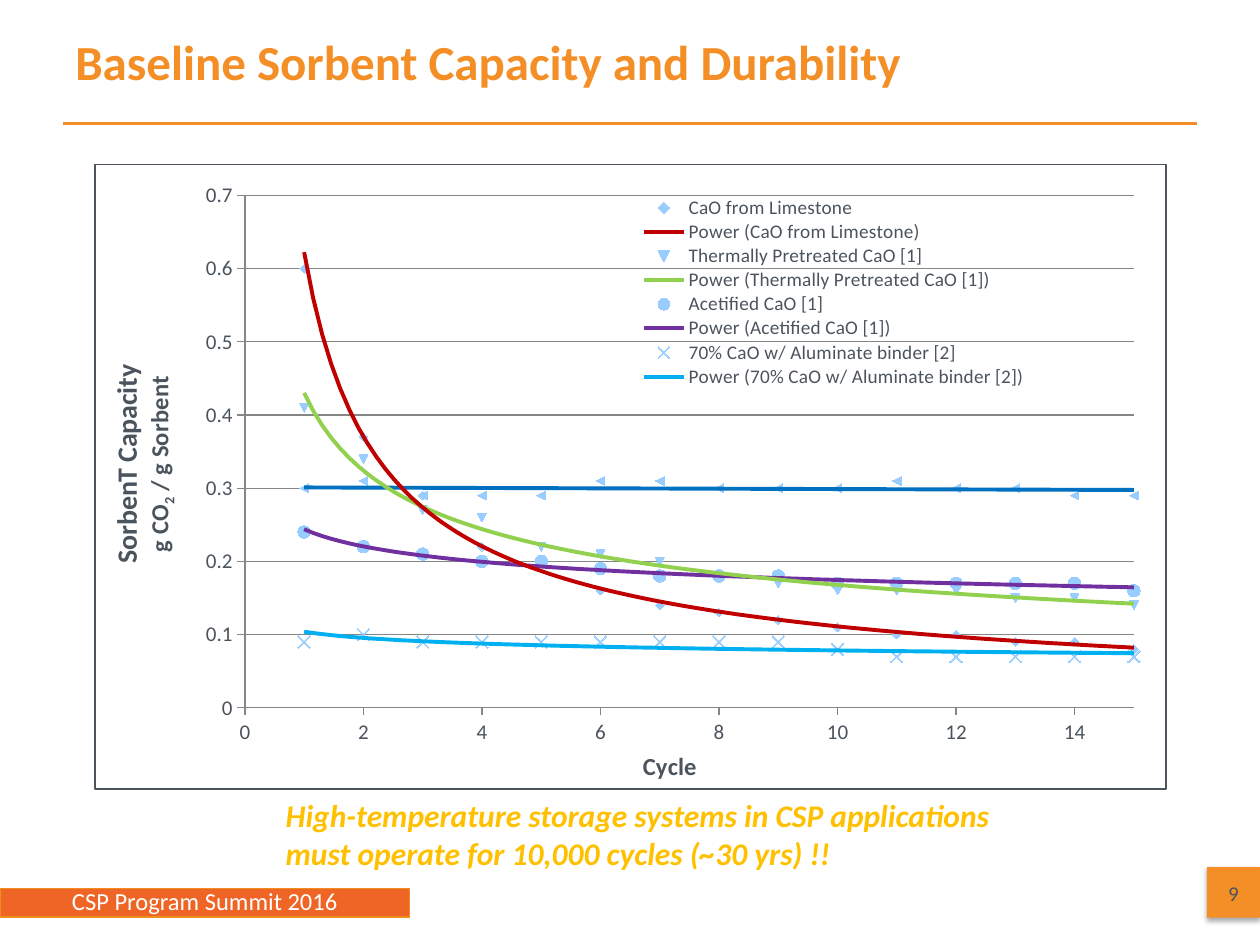
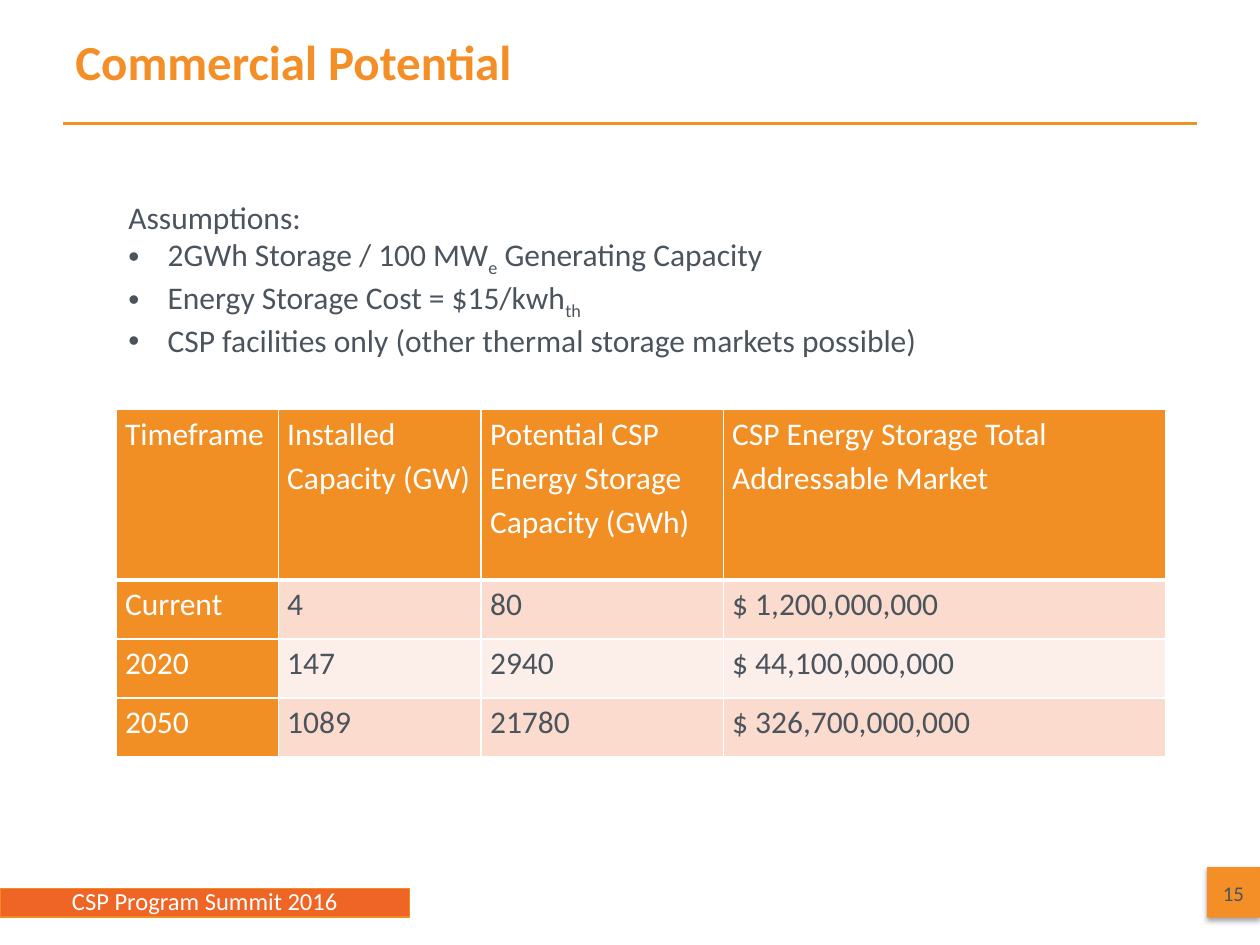
from lxml import etree
from pptx import Presentation
from pptx.chart.data import XyChartData
from pptx.dml.color import RGBColor
from pptx.enum.chart import XL_CHART_TYPE, XL_LEGEND_POSITION, XL_MARKER_STYLE, XL_TICK_MARK
from pptx.enum.shapes import MSO_CONNECTOR, MSO_SHAPE
from pptx.enum.text import MSO_ANCHOR, PP_ALIGN
from pptx.oxml import parse_xml
from pptx.oxml.ns import nsdecls, qn
from pptx.util import Cm, Pt

ORANGE = RGBColor(0xF3, 0x8F, 0x26)
TABLE_ORANGE = RGBColor(0xF1, 0x8F, 0x25)
BAND = RGBColor(0xEE, 0x65, 0x25)
BAND_EDGE = RGBColor(0xF1, 0x8C, 0x1F)
SLATE = RGBColor(0x4B, 0x54, 0x5D)
GOLD = RGBColor(0xFF, 0xC0, 0x00)
WHITE = RGBColor(0xFF, 0xFF, 0xFF)
ROW_FILLS = [RGBColor(0xFA, 0xDB, 0xCD), RGBColor(0xFC, 0xEE, 0xE8)]
MARKER = RGBColor(0x99, 0xCC, 0xFF)
GRID = RGBColor(0x86, 0x86, 0x86)
CRIMSON = RGBColor(0xC0, 0x00, 0x00)
GREEN = RGBColor(0x92, 0xD0, 0x50)
PURPLE = RGBColor(0x70, 0x30, 0xA0)
SKY = RGBColor(0x00, 0xB0, 0xF0)
BLUE = RGBColor(0x00, 0x70, 0xC0)
FONT = "Calibri"

# Name, capacity per cycle, trend type, trend colour, marker style
SORBENTS = [
    ("CaO from Limestone",
     [0.6, 0.37, 0.29, 0.22, 0.2, 0.16, 0.14, 0.13, 0.12, 0.11, 0.1, 0.1, 0.09, 0.09, 0.08],
     "power", CRIMSON, None),
    ("Thermally Pretreated CaO [1]",
     [0.41, 0.34, 0.27, 0.26, 0.22, 0.21, 0.2, 0.18, 0.17, 0.16, 0.16, 0.16, 0.15, 0.15, 0.14],
     "power", GREEN, None),
    ("Acetified CaO [1]",
     [0.24, 0.22, 0.21, 0.2, 0.2, 0.19, 0.18, 0.18, 0.18, 0.17, 0.17, 0.17, 0.17, 0.17, 0.16],
     "power", PURPLE, XL_MARKER_STYLE.CIRCLE),
    ("70% CaO w/ Aluminate binder [2]",
     [0.09, 0.1, 0.09, 0.09, 0.09, 0.09, 0.09, 0.09, 0.09, 0.08, 0.07, 0.07, 0.07, 0.07, 0.07],
     "power", SKY, XL_MARKER_STYLE.X),
    ("",
     [0.3, 0.31, 0.29, 0.29, 0.29, 0.31, 0.31, 0.3, 0.3, 0.3, 0.31, 0.3, 0.3, 0.29, 0.29],
     "linear", BLUE, None),
]
UNLISTED_LEGEND_ENTRIES = [4, 9]  # the unnamed series and its trend line

MARKET = [
    ["Timeframe", "Installed Capacity (GW)", "Potential CSP Energy Storage Capacity (GWh)",
     "CSP Energy Storage Total Addressable Market"],
    ["Current", "4", "80", "$ 1,200,000,000"],
    ["2020", "147", "2940", "$ 44,100,000,000"],
    ["2050", "1089", "21780", "$ 326,700,000,000"],
]


def write_text(frame, text, size=18, color=SLATE, bold=False, italic=False,
               align=PP_ALIGN.LEFT, spacing=None):
    """One paragraph per line; "• " starts a bullet, bars enclose a subscript."""
    for number, line in enumerate(text.split("\n")):
        paragraph = frame.add_paragraph() if number else frame.paragraphs[0]
        if line.startswith("• "):
            line = line[2:]
            properties = paragraph._p.get_or_add_pPr()
            properties.set("marL", str(Cm(0.79)))
            properties.set("indent", str(-Cm(0.79)))
            properties.append(parse_xml(f'<a:buFont {nsdecls("a")} typeface="Arial"/>'))
            properties.append(parse_xml(f'<a:buChar {nsdecls("a")} char="•"/>'))
        paragraph.alignment = align
        if spacing:
            paragraph.line_spacing = spacing
        for part, words in enumerate(line.split("|")):
            run = paragraph.add_run()
            run.text = words
            font = run.font
            font.name, font.size, font.bold, font.italic = FONT, Pt(size), bold, italic
            font.color.rgb = color
            if part % 2:
                run._r.get_or_add_rPr().set("baseline", "-25000")


def add_text(slide, box, text, anchor=MSO_ANCHOR.TOP, **text_format):
    frame = slide.shapes.add_textbox(*map(Cm, box)).text_frame
    frame.word_wrap = True
    frame.vertical_anchor = anchor
    write_text(frame, text, **text_format)


def add_rectangle(slide, box, fill, edge=None):
    shape = slide.shapes.add_shape(MSO_SHAPE.RECTANGLE, *map(Cm, box))
    shape.shadow.inherit = False
    shape.fill.solid()
    shape.fill.fore_color.rgb = fill
    if edge:
        shape.line.color.rgb = edge
        shape.line.width = Pt(0.75)
    else:
        shape.line.fill.background()
    return shape


def add_page_frame(slide, title, page):
    # Page number badge with a soft shadow
    left, top, width, height = badge_box = (24.33, 17.48, 1.07, 1.02)
    badge = add_rectangle(slide, badge_box, ORANGE)
    badge._element.spPr.find(qn("a:effectLst")).append(parse_xml(
        f'<a:outerShdw {nsdecls("a")} blurRad="{Pt(3.1)}" dist="{Pt(1.8)}" dir="5400000" '
        'rotWithShape="0"><a:srgbClr val="000000"><a:alpha val="35000"/></a:srgbClr>'
        '</a:outerShdw>'))
    add_text(slide, (left, top + 0.05, width, height - 0.08), page, anchor=MSO_ANCHOR.MIDDLE,
             size=12, align=PP_ALIGN.CENTER)

    # Rule under the title
    rule = slide.shapes.add_connector(MSO_CONNECTOR.STRAIGHT, Cm(1.27), Cm(2.49),
                                      Cm(24.13), Cm(2.49))
    rule.line.color.rgb = ORANGE
    rule.line.width = Pt(2)
    etree.SubElement(rule._element.spPr, qn("a:effectLst"))

    # Footer band
    add_rectangle(slide, (0, 17.91, 8.26, 0.58), BAND, BAND_EDGE)
    add_text(slide, (0, 17.73, 8.26, 0.86), "CSP Program Summit 2016", size=14, color=WHITE,
             align=PP_ALIGN.CENTER)

    add_text(slide, (1.27, 0, 22.86, 2.46), title, anchor=MSO_ANCHOR.MIDDLE, size=28,
             color=ORANGE, bold=True)


def manual_layout(target, **places):
    settings = "".join(f'<c:{key} val="{value}"/>' for key, value in places.items())
    return parse_xml(f'<c:layout {nsdecls("c")}><c:manualLayout>{target}'
                     f'<c:xMode val="edge"/><c:yMode val="edge"/>{settings}'
                     '</c:manualLayout></c:layout>')


def style_axis(axis, maximum, major, title, title_size):
    axis.minimum_scale, axis.maximum_scale, axis.major_unit = 0, maximum, major
    axis.major_tick_mark, axis.minor_tick_mark = XL_TICK_MARK.OUTSIDE, XL_TICK_MARK.NONE
    axis.format.line.color.rgb = GRID
    axis.tick_labels.font.size = Pt(12)
    axis.tick_labels.number_format = "General"
    axis.tick_labels.number_format_is_linked = False
    write_text(axis.axis_title.text_frame, title, size=title_size, bold=True,
               align=PP_ALIGN.CENTER)


def style_series(series, trend, color, marker_style):
    series.format.line.fill.background()
    series.smooth = False
    marker = series.marker
    if marker_style is not None:
        marker.style = marker_style
    marker.size = 5 if marker_style is None else 7
    marker.format.fill.solid()
    marker.format.fill.fore_color.rgb = MARKER
    marker.format.line.color.rgb = MARKER
    series._element.find(qn("c:xVal")).addprevious(parse_xml(
        f'<c:trendline {nsdecls("c", "a")}><c:spPr><a:ln w="{Pt(2.25)}"><a:solidFill>'
        f'<a:srgbClr val="{color}"/></a:solidFill></a:ln></c:spPr>'
        f'<c:trendlineType val="{trend}"/><c:dispRSqr val="0"/><c:dispEq val="0"/>'
        '</c:trendline>'))


def add_capacity_chart(slide, box):
    data = XyChartData(number_format="General")
    for name, capacities, *_ in SORBENTS:
        series = data.add_series(name)
        for cycle, capacity in enumerate(capacities, start=1):
            series.add_data_point(cycle, capacity)
    chart = slide.shapes.add_chart(XL_CHART_TYPE.XY_SCATTER, *map(Cm, box), data).chart
    chart.has_title = False
    chart.font.name, chart.font.size = FONT, Pt(10)
    chart.font.color.rgb = SLATE

    plot = chart.plots[0]
    plot.vary_by_categories = False
    for series, (_, _, trend, color, marker_style) in zip(plot.series, SORBENTS):
        style_series(series, trend, color, marker_style)

    # Axes
    style_axis(chart.category_axis, 15, 2, "Cycle", 14)
    chart.category_axis.has_major_gridlines = False
    value_axis = chart.value_axis
    style_axis(value_axis, 0.7, 0.1, "SorbenT Capacity\ng CO|2| / g Sorbent", 16)
    for run in value_axis.axis_title.text_frame.paragraphs[1].runs:
        run.font.size = Pt(14)
    value_axis.has_major_gridlines = True
    value_axis.major_gridlines.format.line.color.rgb = GRID

    # Legend over the upper right of the plot
    chart.has_legend = True
    legend = chart.legend
    legend.position = XL_LEGEND_POSITION.RIGHT
    legend.include_in_layout = False
    legend.font.size = Pt(11)
    legend.font.name = FONT
    legend.font.color.rgb = SLATE
    position = legend._element.find(qn("c:legendPos"))
    for old_layout in legend._element.findall(qn("c:layout")):
        legend._element.remove(old_layout)
    position.addnext(manual_layout("", x=0.49, y=0.05, w=0.4, h=0.31))
    for entry in reversed(UNLISTED_LEGEND_ENTRIES):
        position.addnext(parse_xml(f'<c:legendEntry {nsdecls("c")}><c:idx val="{entry}"/>'
                                   '<c:delete val="1"/></c:legendEntry>'))

    # Plot place and outer border
    chart_element = chart._chartSpace.find(qn("c:chart"))
    plot_area = chart_element.find(qn("c:plotArea"))
    for old_layout in plot_area.findall(qn("c:layout")):
        plot_area.remove(old_layout)
    plot_area.insert(0, manual_layout('<c:layoutTarget val="inner"/>',
                                      x=0.14, y=0.05, w=0.83, h=0.82))
    chart_element.addprevious(parse_xml(f'<c:roundedCorners {nsdecls("c")} val="0"/>'))
    chart_element.addnext(parse_xml(
        f'<c:spPr {nsdecls("c", "a")}><a:solidFill><a:srgbClr val="{WHITE}"/></a:solidFill>'
        f'<a:ln w="{Pt(0.75)}"><a:solidFill><a:srgbClr val="{SLATE}"/></a:solidFill></a:ln>'
        '</c:spPr>'))


def add_callout(slide, box, text):
    callout = add_rectangle(slide, box, WHITE)
    callout.text_frame.word_wrap = True
    callout.text_frame.vertical_anchor = MSO_ANCHOR.TOP
    write_text(callout.text_frame, text, color=GOLD, bold=True, italic=True)


def set_borders(cell, bottom_width):
    properties = cell._tc.get_or_add_tcPr()
    for index, side in enumerate("LRTB"):
        width = Pt(bottom_width if side == "B" else 1)
        properties.insert(index, parse_xml(
            f'<a:ln{side} {nsdecls("a")} w="{width}"><a:solidFill>'
            f'<a:srgbClr val="{WHITE}"/></a:solidFill></a:ln{side}>'))


def add_market_table(slide, box):
    table = slide.shapes.add_table(len(MARKET), len(MARKET[0]), *map(Cm, box)).table
    for column, width in zip(table.columns, [3.27, 4.09, 4.88, 8.93]):
        column.width = Cm(width)
    for row, height in zip(table.rows, [3.43, 1.19, 1.19, 1.19]):
        row.height = Cm(height)
    for row_number, texts in enumerate(MARKET):
        for column_number, text in enumerate(texts):
            cell = table.cell(row_number, column_number)
            heading = row_number == 0 or column_number == 0
            cell.fill.solid()
            cell.fill.fore_color.rgb = TABLE_ORANGE if heading else ROW_FILLS[(row_number - 1) % 2]
            cell.margin_left = cell.margin_right = Cm(0.18)
            cell.margin_top = cell.margin_bottom = 0
            set_borders(cell, bottom_width=1 if row_number else 3)
            write_text(cell.text_frame, text, color=WHITE if heading else SLATE, spacing=1.15)


def build_durability_slide(slide):
    add_page_frame(slide, "Baseline Sorbent Capacity and Durability", "9")
    add_callout(slide, (5.51, 15.93, 15.67, 1.8),
                "High-temperature storage systems in CSP applications "
                "must operate for 10,000 cycles (~30 yrs) !!")
    add_capacity_chart(slide, (1.9, 3.3, 21.62, 12.62))


def build_market_slide(slide):
    add_page_frame(slide, "Commercial Potential", "15")
    add_market_table(slide, (2.34, 8.26, 21.17, 7))
    add_text(slide, (2.34, 3.86, 21.17, 3.33),
             "Assumptions:\n"
             "• 2GWh Storage / 100 MW|e| Generating Capacity\n"
             "• Energy Storage Cost = $15/kwh|th\n"
             "• CSP facilities only (other thermal storage markets possible)")


def main():
    presentation = Presentation()
    presentation.slide_width, presentation.slide_height = Cm(25.4), Cm(19.05)
    for build in (build_durability_slide, build_market_slide):
        build(presentation.slides.add_slide(presentation.slide_layouts[6]))
    presentation.save("out.pptx")


if __name__ == "__main__":
    main()
